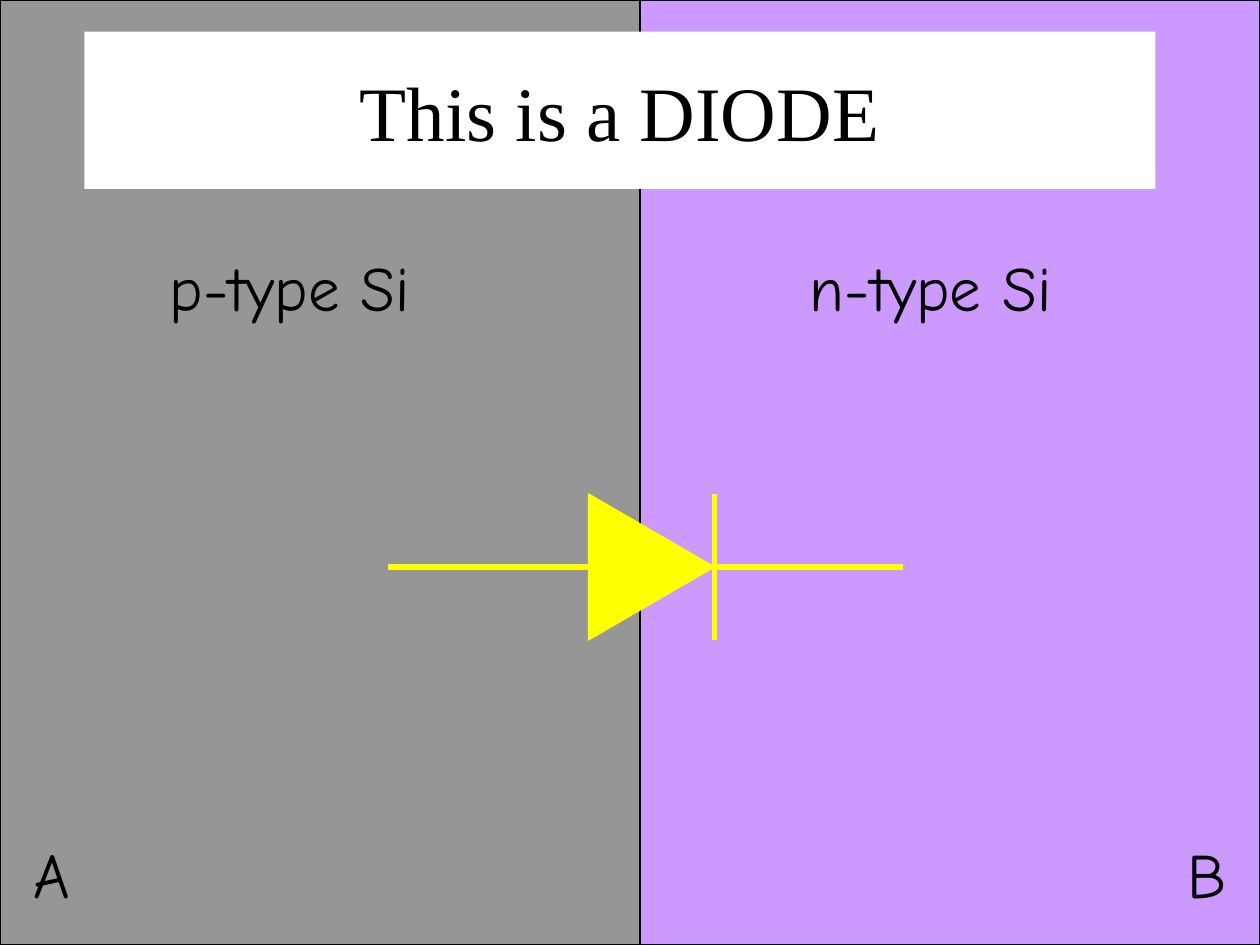
from pptx import Presentation
from pptx import util as u
from pptx.dml.color import RGBColor
from pptx.enum import shapes, text
from pptx.oxml.ns import qn
from lxml import etree

BLACK = RGBColor(0x00, 0x00, 0x00)
WHITE = RGBColor(0xFF, 0xFF, 0xFF)
GREY = RGBColor(0x96, 0x96, 0x96)
VIOLET = RGBColor(0xCC, 0x99, 0xFF)
YELLOW = RGBColor(0xFF, 0xFF, 0x00)

WIDTH, HEIGHT = 10, 7.5
JUNCTION = 5.08
AXIS = 4.5
BAR_X, BAR_HALF = 5.67, 0.58
LEAD = 1.59
LEFT_END, RIGHT_END = 3.08, 7.17
TRIANGLE_WIDTH, TRIANGLE_HEIGHT = 1.16, 1
TRIANGLE_CENTRE = 5.17

REGIONS = [
    (JUNCTION, WIDTH - JUNCTION, VIOLET),
    (0, JUNCTION, GREY),
]
TITLE = ("This is a DIODE", (0.67, 0.25, 8.5, 1.25))
LABEL_ROW, TERMINAL_ROW, LABEL_HEIGHT = 1.92, 6.58, 0.71
LABELS = [
    ("A", 0.17, TERMINAL_ROW, 0.57),
    ("B", 9.33, TERMINAL_ROW, 0.52),
    ("p-type Si", 1.25, LABEL_ROW, 2.39),
    ("n-type Si", 6.33, LABEL_ROW, 2.39),
]
WIRES = [
    (BAR_X, AXIS - BAR_HALF, BAR_X, AXIS + BAR_HALF),
    (LEFT_END, AXIS, LEFT_END + LEAD, AXIS),
    (RIGHT_END - LEAD, AXIS, RIGHT_END, AXIS),
]
TITLE_FONT = {"name": "Times New Roman", "size": u.Pt(44)}
LABEL_FONT = {"name": "Comic Neue", "size": u.Pt(36)}


def inches(values):
    return [u.Inches(value) for value in values]


def add_block(parent, kind, place, fill, line):
    block = parent.add_shape(kind, *inches(place))
    block.shadow.inherit = False
    block.fill.solid()
    block.fill.fore_color.rgb = fill
    block.line.color.rgb = line
    block.line.width = u.Pt(0.75)
    return block


def add_text(page, words, place, font, **frame_format):
    box = page.shapes.add_textbox(*inches(place))
    for name, value in frame_format.items():
        setattr(box.text_frame, name, value)
    para = box.text_frame.paragraphs[0]
    span = para.add_run()
    span.text = words
    for name, value in font.items():
        setattr(span.font, name, value)
    span.font.color.rgb = BLACK
    return box


def add_wire(parent, ends):
    wire = parent.add_connector(shapes.MSO_CONNECTOR.STRAIGHT, *inches(ends))
    wire.line.color.rgb = YELLOW
    wire.line.width = u.Pt(3)
    etree.SubElement(wire._element.spPr, qn("a:effectLst"))


def main():
    deck = Presentation()
    deck.slide_width, deck.slide_height = inches((WIDTH, HEIGHT))
    page = deck.slides.add_slide(deck.slide_layouts[6])

    for left, width, colour in REGIONS:
        add_block(page.shapes, shapes.MSO_SHAPE.RECTANGLE,
                  (left, 0, width, HEIGHT), colour, BLACK)

    title = add_text(page, *TITLE, TITLE_FONT, word_wrap=True,
                     vertical_anchor=text.MSO_ANCHOR.MIDDLE)
    title.text_frame.paragraphs[0].alignment = text.PP_ALIGN.CENTER
    title.fill.solid()
    title.fill.fore_color.rgb = WHITE

    for words, left, top, width in LABELS:
        add_text(page, words, (left, top, width, LABEL_HEIGHT), LABEL_FONT,
                 word_wrap=False, auto_size=text.MSO_AUTO_SIZE.SHAPE_TO_FIT_TEXT)

    diode = page.shapes.add_group_shape()
    place = (TRIANGLE_CENTRE - TRIANGLE_WIDTH / 2, AXIS - TRIANGLE_HEIGHT / 2,
             TRIANGLE_WIDTH, TRIANGLE_HEIGHT)
    triangle = add_block(diode.shapes, shapes.MSO_SHAPE.ISOSCELES_TRIANGLE,
                         place, YELLOW, YELLOW)
    triangle.rotation = 90
    for ends in WIRES:
        add_wire(diode.shapes, ends)

    deck.save("out.pptx")


if __name__ == "__main__":
    main()
